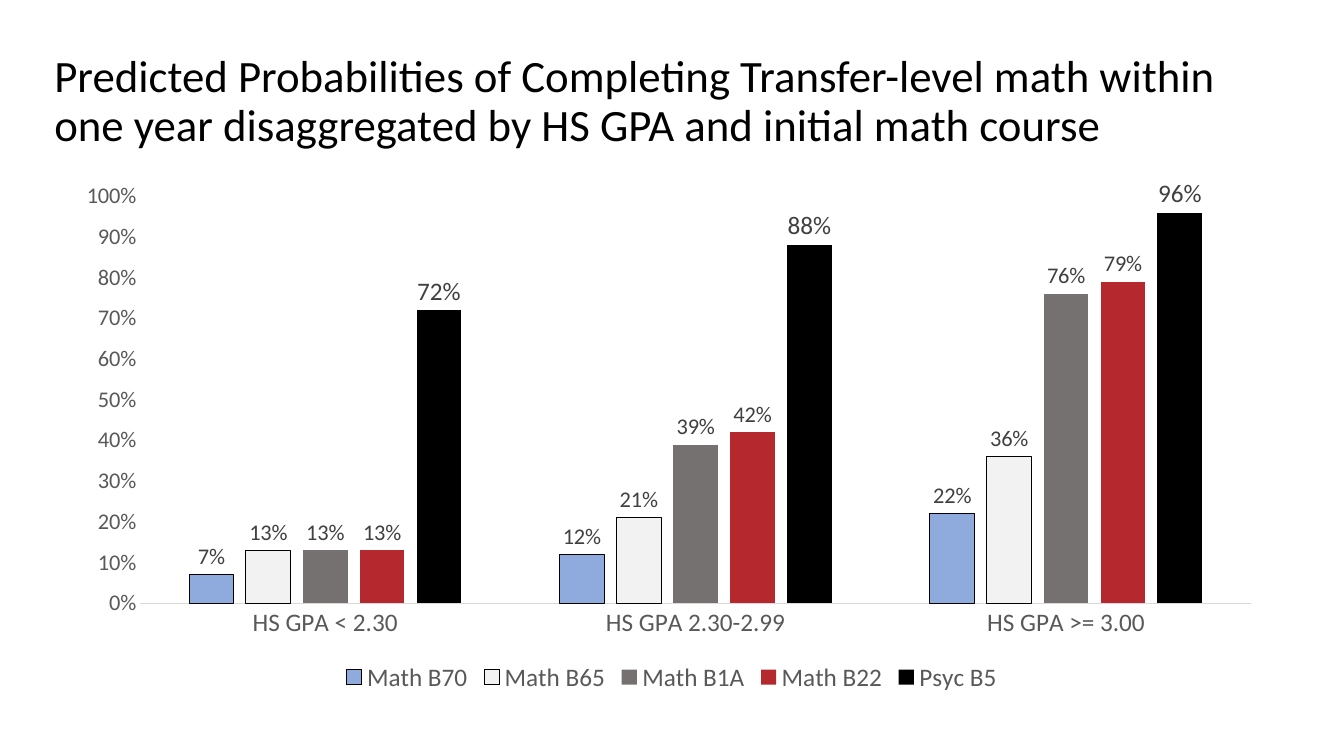
from lxml.etree import SubElement
from pptx import Presentation
from pptx.chart.data import CategoryChartData
from pptx.dml.color import RGBColor
from pptx.enum.chart import (XL_CHART_TYPE, XL_LABEL_POSITION,
                             XL_LEGEND_POSITION, XL_TICK_MARK)
from pptx.enum.text import MSO_ANCHOR
from pptx.oxml.ns import qn
from pptx.util import Pt

BLACK = RGBColor(0x00, 0x00, 0x00)
BLUE = RGBColor(0x8F, 0xAA, 0xDC)
PALE = RGBColor(0xF2, 0xF2, 0xF2)
GRAY = RGBColor(0x76, 0x71, 0x71)
RED = RGBColor(0xB5, 0x29, 0x2E)
AXIS_TEXT = RGBColor(0x59, 0x59, 0x59)
LABEL_TEXT = RGBColor(0x40, 0x40, 0x40)
AXIS_LINE = RGBColor(0xD9, 0xD9, 0xD9)

TITLE = ("Predicted Probabilities of Completing Transfer-level math within "
         "one year disaggregated by HS GPA and initial math course")
GPA_BANDS = ["HS GPA < 2.30", "HS GPA 2.30-2.99", "HS GPA >= 3.00"]
# course, probabilities, fill, outline, label size
COURSES = [
    ("Math B70", (0.07, 0.12, 0.22), BLUE, BLACK, 16),
    ("Math B65", (0.13, 0.21, 0.36), PALE, BLACK, 16),
    ("Math B1A", (0.13, 0.39, 0.76), GRAY, None, 16),
    ("Math B22", (0.13, 0.42, 0.79), RED, None, 16),
    ("Psyc B5", (0.72, 0.88, 0.96), BLACK, None, 18),
]

PX = 9144  # EMU, 100 px to the inch
SLIDE_SIZE = (1333, 750)
TITLE_BOX = (44, 29, 1245, 145)
CHART_BOX = (67, 174, 1198, 518)
# inner plot area as shares of the chart
PLOT_SHARES = {"x": 0.06, "y": 0.04, "w": 0.92, "h": 0.78}


def emu(lengths):
    return [length * PX for length in lengths]


def set_font(font, size, color):
    formats = {"name": "Calibri", "size": Pt(size), "bold": False}
    for attribute, value in formats.items():
        setattr(font, attribute, value)
    font.color.rgb = color


def add_title(slide):
    frame = slide.shapes.add_textbox(*emu(TITLE_BOX)).text_frame
    frame.word_wrap = True
    frame.vertical_anchor = MSO_ANCHOR.MIDDLE
    heading = frame.paragraphs[0]
    heading.line_spacing = 0.9
    heading.text = TITLE
    set_font(heading.runs[0].font, 32, BLACK)


def fix_plot_area(chart):
    """Pin the inner plot area to PLOT_SHARES."""
    plot_area = chart.plots[0]._element.getparent()
    layout = plot_area.find(qn("c:layout"))
    if layout is None:
        layout = SubElement(plot_area, qn("c:layout"))
        plot_area.insert(0, layout)
    manual = SubElement(layout, qn("c:manualLayout"))
    settings = {"layoutTarget": "inner", "xMode": "edge", "yMode": "edge",
                **PLOT_SHARES}
    for tag, value in settings.items():
        SubElement(manual, qn(f"c:{tag}")).set("val", str(value))


def style_axes(chart):
    for axis, size in ((chart.category_axis, 18), (chart.value_axis, 16)):
        axis.has_major_gridlines = False
        axis.major_tick_mark = axis.minor_tick_mark = XL_TICK_MARK.NONE
        set_font(axis.tick_labels.font, size, AXIS_TEXT)
    band_line = chart.category_axis.format.line
    band_line.color.rgb = AXIS_LINE
    band_line.width = Pt(0.75)

    probability = chart.value_axis
    probability.format.line.fill.background()
    scale = {"minimum_scale": 0, "maximum_scale": 1, "major_unit": 0.1}
    for attribute, value in scale.items():
        setattr(probability, attribute, value)
    probability.tick_labels.number_format = "0%"
    probability.tick_labels.number_format_is_linked = False


def style_course(bars, fill, outline, label_size):
    bars.invert_if_negative = False
    bars.format.fill.solid()
    bars.format.fill.fore_color.rgb = fill
    if outline is None:
        bars.format.line.fill.background()
    else:
        bars.format.line.color.rgb = outline
        bars.format.line.width = Pt(0.75)
    labels = bars.data_labels
    formats = {"show_value": True, "number_format": "0%",
               "number_format_is_linked": False,
               "position": XL_LABEL_POSITION.OUTSIDE_END}
    for attribute, value in formats.items():
        setattr(labels, attribute, value)
    set_font(labels.font, label_size, LABEL_TEXT)


def add_probability_chart(slide):
    chart_data = CategoryChartData(number_format="0%")
    chart_data.categories = GPA_BANDS
    for course, probabilities, *_ in COURSES:
        chart_data.add_series(course, probabilities)
    chart = slide.shapes.add_chart(XL_CHART_TYPE.COLUMN_CLUSTERED,
                                   *emu(CHART_BOX), chart_data).chart
    chart.has_title = False
    set_font(chart.font, 10, BLACK)
    fix_plot_area(chart)
    style_axes(chart)

    columns = chart.plots[0]
    spacing = {"gap_width": 219, "overlap": -27, "vary_by_categories": False}
    for attribute, value in spacing.items():
        setattr(columns, attribute, value)
    for bars, (_, _, fill, outline, label_size) in zip(columns.series, COURSES):
        style_course(bars, fill, outline, label_size)

    chart.has_legend = True
    chart.legend.position = XL_LEGEND_POSITION.BOTTOM
    chart.legend.include_in_layout = False
    set_font(chart.legend.font, 18, AXIS_TEXT)


def main():
    deck = Presentation()
    deck.slide_width, deck.slide_height = emu(SLIDE_SIZE)
    slide = deck.slides.add_slide(deck.slide_layouts[6])
    add_title(slide)
    add_probability_chart(slide)
    deck.save("out.pptx")


if __name__ == "__main__":
    main()
